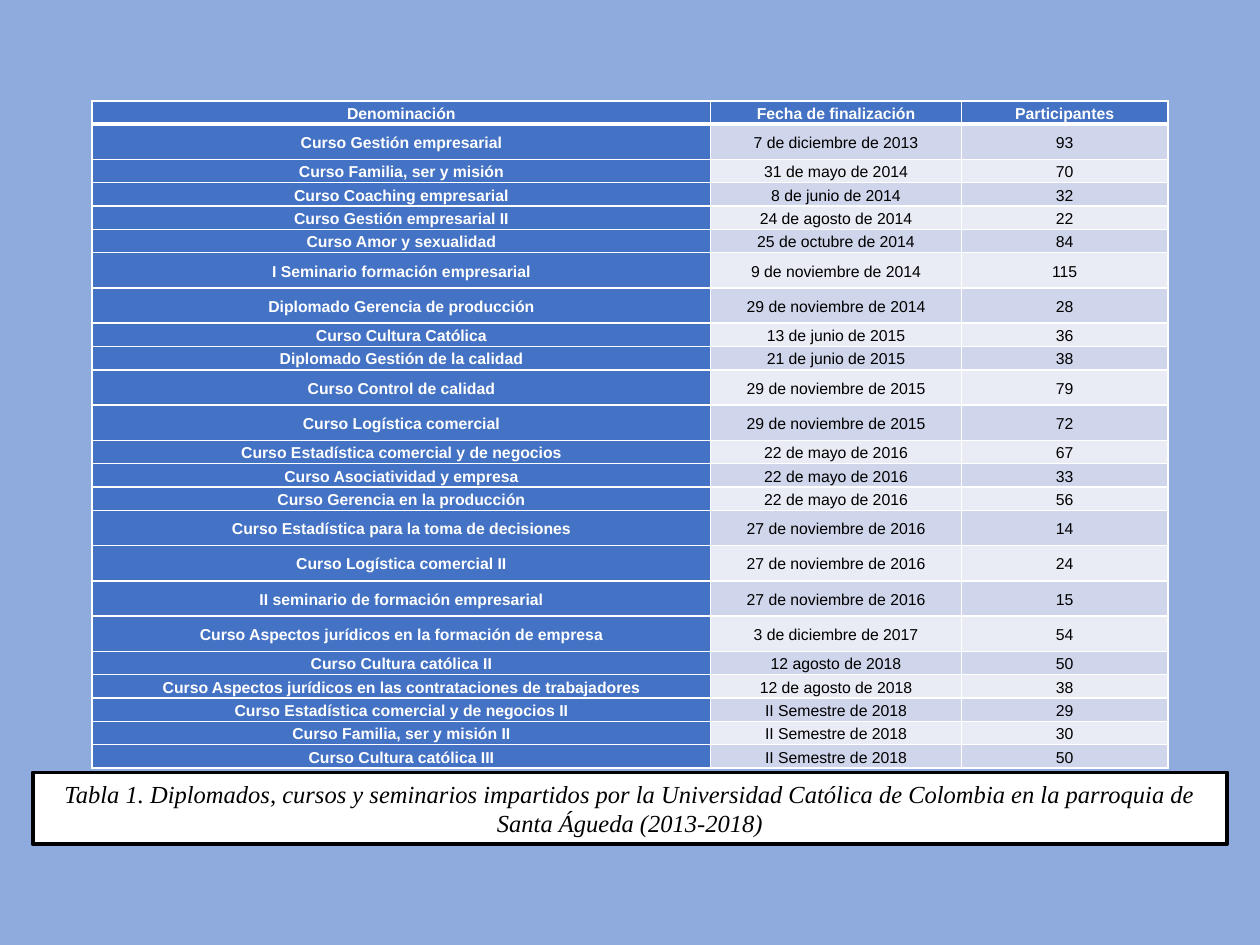
from dataclasses import dataclass

from lxml import etree
from pptx import Presentation
from pptx import util as u
from pptx.dml.color import RGBColor
from pptx.enum import shapes, text
from pptx.oxml import ns

COLORS = {
    "background": "8FAADC",
    "header": "4472C4",
    "odd": "CFD5EA",
    "even": "E9EBF5",
    "white": "FFFFFF",
    "black": "000000",
}
COLUMN_WIDTHS = (4.91, 1.99, 1.64)
TABLE_HEIGHT = 5.3
TALL_ROW = 0.28
HEADINGS = ("Denominación", "Fecha de finalización", "Participantes")
CAPTION = (
    "Tabla 1. Diplomados, cursos y seminarios impartidos por la Universidad "
    "Católica de Colombia en la parroquia de Santa Águeda (2013-2018)"
)


@dataclass
class Course:
    name: str
    date: str
    participants: int
    tall: bool = False


COURSES = [
    Course("Curso Gestión empresarial", "7 de diciembre de 2013", 93, True),
    Course("Curso Familia, ser y misión", "31 de mayo de 2014", 70),
    Course("Curso Coaching empresarial", "8 de junio de 2014", 32),
    Course("Curso Gestión empresarial II", "24 de agosto de 2014", 22),
    Course("Curso Amor y sexualidad", "25 de octubre de 2014", 84),
    Course("I Seminario formación empresarial", "9 de noviembre de 2014", 115, True),
    Course("Diplomado Gerencia de producción", "29 de noviembre de 2014", 28, True),
    Course("Curso Cultura Católica", "13 de junio de 2015", 36),
    Course("Diplomado Gestión de la calidad", "21 de junio de 2015", 38),
    Course("Curso Control de calidad", "29 de noviembre de 2015", 79, True),
    Course("Curso Logística comercial", "29 de noviembre de 2015", 72, True),
    Course("Curso Estadística comercial y de negocios", "22 de mayo de 2016", 67),
    Course("Curso Asociatividad y empresa", "22 de mayo de 2016", 33),
    Course("Curso Gerencia en la producción", "22 de mayo de 2016", 56),
    Course("Curso Estadística para la toma de decisiones", "27 de noviembre de 2016", 14, True),
    Course("Curso Logística comercial II", "27 de noviembre de 2016", 24, True),
    Course("II seminario de formación empresarial", "27 de noviembre de 2016", 15, True),
    Course("Curso Aspectos jurídicos en la formación de empresa", "3 de diciembre de 2017", 54, True),
    Course("Curso Cultura católica II", "12 agosto de 2018", 50),
    Course("Curso Aspectos jurídicos en las contrataciones de trabajadores", "12 de agosto de 2018", 38),
    Course("Curso Estadística comercial y de negocios II", "II Semestre de 2018", 29),
    Course("Curso Familia, ser y misión II", "II Semestre de 2018", 30),
    Course("Curso Cultura católica III", "II Semestre de 2018", 50),
]


def rgb(name: str) -> RGBColor:
    return RGBColor.from_string(COLORS[name])


def set_borders(cell, top: float, bottom: float) -> None:
    tc_pr = cell._tc.get_or_add_tcPr()
    widths = {"lnL": 1, "lnR": 1, "lnT": top, "lnB": bottom}
    for i, (side, width) in enumerate(widths.items()):
        ln = etree.Element(ns.qn(f"a:{side}"), w=str(u.Pt(width)))
        fill = etree.SubElement(ln, ns.qn("a:solidFill"))
        etree.SubElement(fill, ns.qn("a:srgbClr"), val=COLORS["white"])
        tc_pr.insert(i, ln)


def write_cell(cell, content: str, fill: str, strong: bool) -> None:
    cell.fill.solid()
    cell.fill.fore_color.rgb = rgb(fill)
    cell.margin_left = cell.margin_right = u.Inches(0.03)
    cell.margin_top = cell.margin_bottom = 0
    cell.vertical_anchor = text.MSO_ANCHOR.MIDDLE
    p = cell.text_frame.paragraphs[0]
    p.text = content
    p.alignment = text.PP_ALIGN.CENTER
    p.line_spacing = 1.15
    p.space_after = u.Pt(8)
    font = p.runs[0].font
    font.name = "Arial"
    font.size = u.Pt(9)
    font.bold = strong
    font.color.rgb = rgb("white" if strong else "black")


def add_course_table(s, courses: list[Course]) -> None:
    rows = [HEADINGS] + [(c.name, c.date, str(c.participants)) for c in courses]
    tall = [False] + [c.tall for c in courses]
    short_row = (TABLE_HEIGHT - TALL_ROW * sum(tall)) / tall.count(False)
    table = s.shapes.add_table(
        len(rows), len(HEADINGS), u.Inches(0.73), u.Inches(0.8),
        u.Inches(sum(COLUMN_WIDTHS)), u.Inches(TABLE_HEIGHT),
    ).table
    for column, width in zip(table.columns, COLUMN_WIDTHS):
        column.width = u.Inches(width)
    for i, values in enumerate(rows):
        table.rows[i].height = u.Inches(TALL_ROW if tall[i] else short_row)
        for j, value in enumerate(values):
            strong = i == 0 or j == 0
            band = "odd" if i % 2 else "even"
            cell = table.cell(i, j)
            write_cell(cell, value, "header" if strong else band, strong)
            set_borders(cell, 3 if i == 1 else 1, 3 if i == 0 else 1)


def add_caption(s, content: str) -> None:
    sp = s.shapes.add_shape(
        shapes.MSO_SHAPE.RECTANGLE,
        u.Inches(0.26), u.Inches(6.13), u.Inches(9.48), u.Inches(0.57),
    )
    sp.shadow.inherit = False
    sp.fill.solid()
    sp.fill.fore_color.rgb = rgb("white")
    sp.line.color.rgb = rgb("black")
    sp.line.width = u.Pt(2)
    tf = sp.text_frame
    tf.word_wrap = True
    tf.text = content
    p = tf.paragraphs[0]
    p.alignment = text.PP_ALIGN.CENTER
    font = p.runs[0].font
    font.name = "Times New Roman"
    font.size = u.Pt(14)
    font.italic = True
    font.color.rgb = rgb("black")


def main() -> None:
    prs = Presentation()
    prs.slide_width, prs.slide_height = u.Inches(10), u.Inches(7.5)
    s = prs.slides.add_slide(prs.slide_layouts[6])
    s.background.fill.solid()
    s.background.fill.fore_color.rgb = rgb("background")
    add_course_table(s, COURSES)
    add_caption(s, CAPTION)
    prs.save("out.pptx")


if __name__ == "__main__":
    main()
